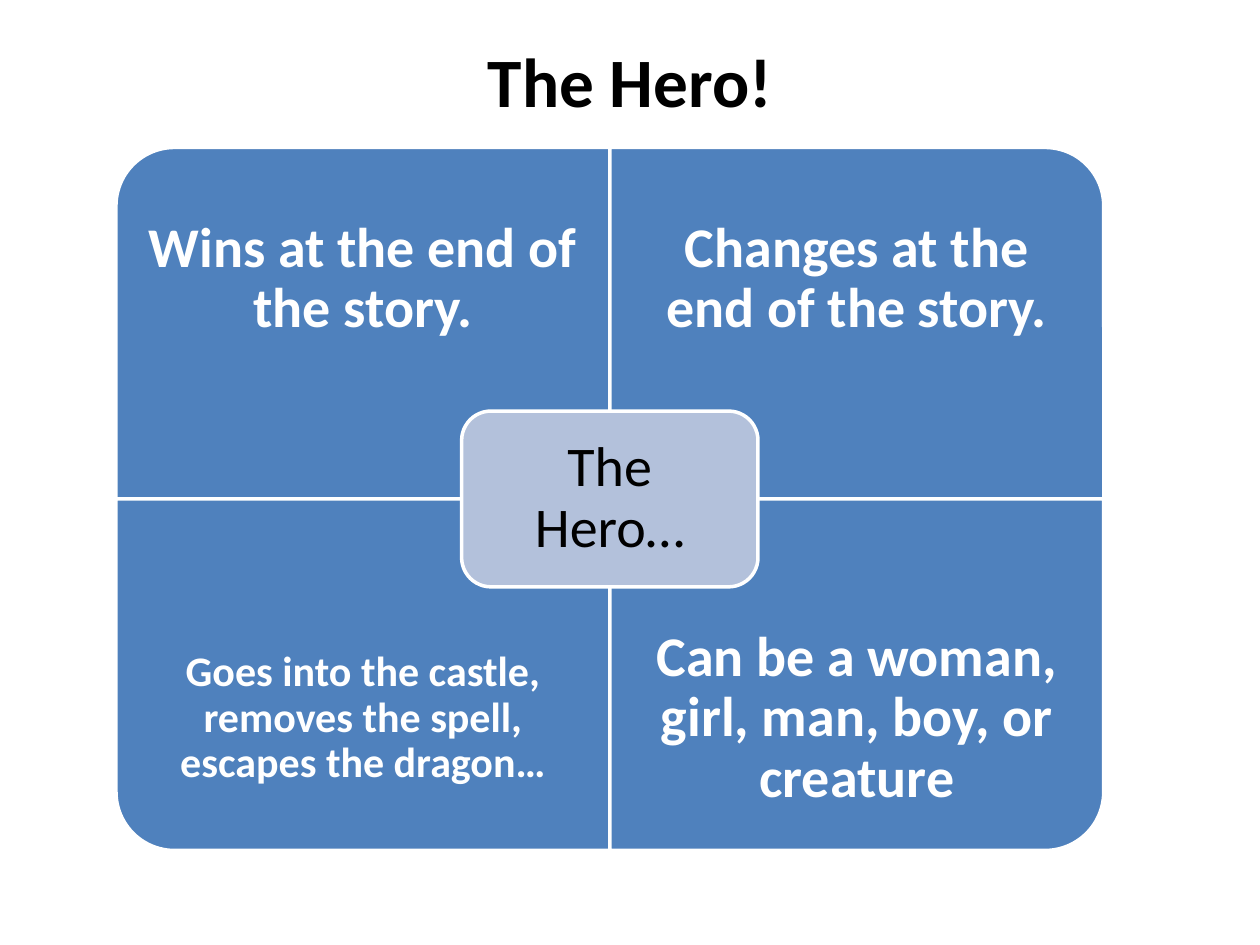
from dataclasses import dataclass

from pptx import Presentation
from pptx.dml.color import RGBColor
from pptx.enum.shapes import MSO_SHAPE
from pptx.enum.text import MSO_ANCHOR, PP_ALIGN
from pptx.util import Inches, Pt

ROUND_ONE_CORNER = MSO_SHAPE.ROUND_1_RECTANGLE
ROUNDED = MSO_SHAPE.ROUNDED_RECTANGLE
TOP, MIDDLE = MSO_ANCHOR.TOP, MSO_ANCHOR.MIDDLE
CENTER = PP_ALIGN.CENTER

FONT = "Calibri"
COLORS = {"quadrant": "4F81BD", "center": "B3C1DB", "white": "FFFFFF", "black": "000000"}

# Quadrant grid, in inches
GRID_LEFT, GRID_TOP = 0.92, 1.17
CELL_WIDTH, CELL_HEIGHT = 3.92, 2.79
TEXT_HEIGHT = CELL_HEIGHT * 0.75


@dataclass
class Box:
    left: float
    top: float
    width: float
    height: float

    def inset(self, margin: float) -> "Box":
        return Box(self.left + margin, self.top + margin,
                   self.width - 2 * margin, self.height - 2 * margin)

    def lengths(self) -> list:
        return [Inches(value) for value in (self.left, self.top, self.width, self.height)]


@dataclass
class Quadrant:
    text: str
    row: int
    column: int
    rotation: int
    size: float = 32
    margin: float = 0.25


QUADRANTS = [
    Quadrant("Wins at the end of the story.", 0, 0, 270),
    Quadrant("Changes at the end of the story.", 0, 1, 0),
    Quadrant("Goes into the castle, removes the spell, escapes the dragon…", 1, 0, 180,
             size=24, margin=0.19),
    Quadrant("Can be a woman, girl, man, boy, or creature", 1, 1, 90),
]


def add_text(slide, text: str, box: Box, *, size: float, color: str, bold: bool = False,
             margin: float = 0, anchor=MIDDLE, line_spacing: float = 0.9) -> None:
    frame = slide.shapes.add_textbox(*box.lengths()).text_frame
    frame.word_wrap = True
    frame.vertical_anchor = anchor
    frame.margin_left = frame.margin_right = Inches(margin)
    frame.margin_top = frame.margin_bottom = Inches(margin)
    paragraph = frame.paragraphs[0]
    paragraph.alignment = CENTER
    paragraph.line_spacing = line_spacing
    run = paragraph.add_run()
    run.text = text
    run.font.name = FONT
    run.font.size = Pt(size)
    run.font.bold = bold
    run.font.color.rgb = RGBColor.from_string(COLORS[color])


def add_panel(slide, kind, box: Box, color: str, rotation: int = 0) -> None:
    # A quarter turn swaps width and height around the same middle
    if rotation % 180:
        box = Box(box.left + (box.width - box.height) / 2,
                  box.top + (box.height - box.width) / 2, box.height, box.width)
    shape = slide.shapes.add_shape(kind, *box.lengths())
    shape.rotation = rotation
    shape.shadow.inherit = False
    shape.fill.solid()
    shape.fill.fore_color.rgb = RGBColor.from_string(COLORS[color])
    shape.line.color.rgb = RGBColor.from_string(COLORS["white"])
    shape.line.width = Pt(2)


def add_quadrant(slide, quadrant: Quadrant) -> None:
    left = GRID_LEFT + quadrant.column * CELL_WIDTH
    top = GRID_TOP + quadrant.row * CELL_HEIGHT
    add_panel(slide, ROUND_ONE_CORNER, Box(left, top, CELL_WIDTH, CELL_HEIGHT),
              "quadrant", quadrant.rotation)
    # Text keeps to the outer three quarters, clear of the center
    text_top = top + quadrant.row * (CELL_HEIGHT - TEXT_HEIGHT)
    add_text(slide, quadrant.text, Box(left, text_top, CELL_WIDTH, TEXT_HEIGHT),
             size=quadrant.size, color="white", bold=True, margin=quadrant.margin)


def main() -> None:
    presentation = Presentation()
    presentation.slide_width, presentation.slide_height = Inches(10), Inches(7.5)
    slide = presentation.slides.add_slide(presentation.slide_layouts[6])

    # Title
    add_text(slide, "The Hero!", Box(0.5, 0.3, 9, 1.25), size=39.6, color="black",
             bold=True, anchor=TOP, line_spacing=1)

    # Four quadrants
    for quadrant in QUADRANTS:
        add_quadrant(slide, quadrant)

    # Center label
    width, height = CELL_WIDTH * 0.6, CELL_HEIGHT / 2
    center = Box(GRID_LEFT + CELL_WIDTH - width / 2,
                 GRID_TOP + CELL_HEIGHT - height / 2, width, height)
    add_panel(slide, ROUNDED, center, "center")
    add_text(slide, "The Hero…", center.inset(0.07), size=32, color="black", margin=0.13)

    presentation.save("out.pptx")


if __name__ == "__main__":
    main()
